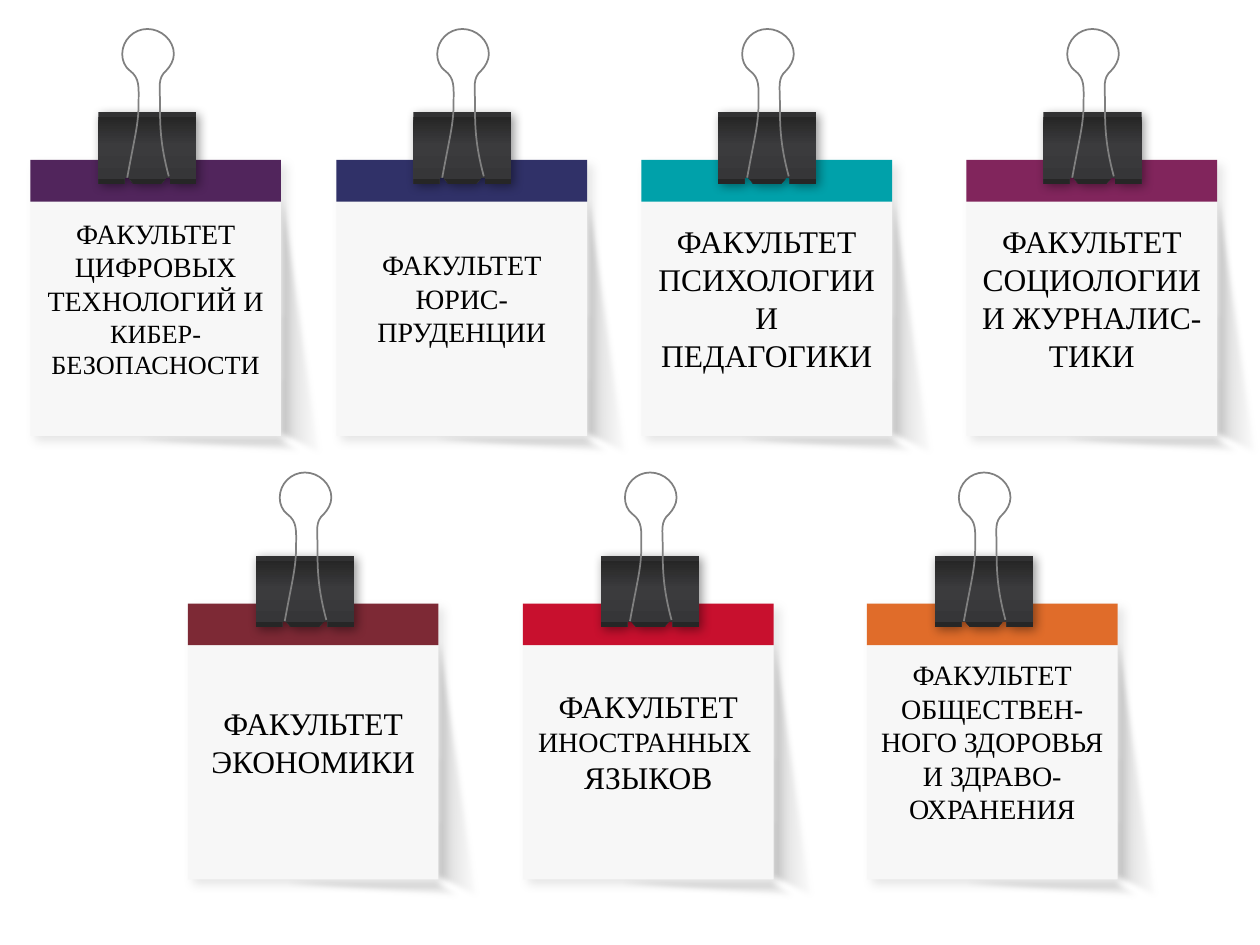
"""Build a slide of seven faculty cards, each held by a binder clip."""
from dataclasses import dataclass

import lxml.etree
import pptx
import pptx.dml.color
import pptx.enum.lang
import pptx.enum.shapes
import pptx.enum.text
import pptx.oxml
import pptx.oxml.ns
import pptx.util
from pptx.util import Inches

CARD_WIDTH, CARD_HEIGHT, BAND_HEIGHT = 1.99, 2.19, 0.33
CARD_TOP, CLIP_TOP, WIRE_TOP, ROW_STEP = 1.27, 0.89, 0.23, 3.52
FONT = "Times New Roman"

SIDE_SHADE = [(1.96, 2.2), (2.34, 2.4), (1.97, -0.26)]
BOTTOM_SHADE = [(2.01, 2.18), (2.34, 2.37), (-0.4, 2.18)]
CLIP_OUTLINE = [(0, 0), (0.78, 0), (0.78, 0.57), (0.57, 0.57), (0.57, 0.52), (0.54, 0.52),
                (0.5, 0.57), (0.28, 0.57), (0.24, 0.52), (0.21, 0.52), (0.21, 0.57), (0, 0.57)]
WIRE_CURVE = [(0.23, 1.18),
              (0.29, 0.85), (0.32, 0.76), (0.32, 0.58),
              (0.32, 0.46), (0.33, 0.39), (0.25, 0.33),
              (0.21, 0.3), (0.19, 0.25), (0.19, 0.2),
              (0.19, 0.09), (0.28, 0), (0.39, 0),
              (0.5, 0), (0.6, 0.09), (0.6, 0.2),
              (0.6, 0.25), (0.57, 0.3), (0.54, 0.33),
              (0.47, 0.39), (0.49, 0.46), (0.49, 0.58),
              (0.49, 0.76), (0.49, 0.91), (0.56, 1.17)]

SHADE_STOPS = [(0, "808080", 44), (100, "F3F3F3", 12)]
CLIP_STOPS = [(7, "313132", 100), (7, "262626", 100), (46, "3B3B3D", 100),
              (93, "363638", 100), (93, "262626", 100)]


@dataclass
class Faculty:
    left: float
    row: int
    clip_left: float
    color: str
    paragraphs: list[list[tuple[str, int]]]


FACULTIES = [
    Faculty(0.24, 0, 0.78, "51255C", [[("ФАКУЛЬТЕТ ЦИФРОВЫХ ТЕХНОЛОГИЙ И ", 16),
                                       ("КИБЕР-БЕЗОПАСНОСТИ", 15)]]),
    Faculty(2.67, 0, 3.28, "303168", [[("ФАКУЛЬТЕТ ЮРИС-ПРУДЕНЦИИ", 16)]]),
    Faculty(5.09, 0, 5.7, "00A1AA", [[("ФАКУЛЬТЕТ ПСИХОЛОГИИ И ПЕДАГОГИКИ", 18)]]),
    Faculty(7.67, 0, 8.28, "81255C", [[("ФАКУЛЬТЕТ СОЦИОЛОГИИ И ЖУРНАЛИС-ТИКИ", 18)]]),
    Faculty(1.49, 1, 2.03, "7D2935", [[("ФАКУЛЬТЕТ ЭКОНОМИКИ", 18)]]),
    Faculty(4.15, 1, 4.77, "C8102E", [[("ФАКУЛЬТЕТ ", 18), ("ИНОСТРАННЫХ ", 16)],
                                      [("ЯЗЫКОВ", 18)]]),
    Faculty(6.88, 1, 7.42, "E06C2A",
            [[("ФАКУЛЬТЕТ ОБЩЕСТВЕН-НОГО ЗДОРОВЬЯ И ЗДРАВО-ОХРАНЕНИЯ", 16)]]),
]


def rgb(color: str) -> pptx.dml.color.RGBColor:
    return pptx.dml.color.RGBColor.from_string(color)


def drawing_xml(markup: str) -> lxml.etree._Element:
    tag, rest = markup[1:].split(" ", 1)
    return pptx.oxml.parse_xml(f"<{tag} {pptx.oxml.ns.nsdecls('a')} {rest}")


def add_effect(shape, markup: str) -> None:
    shape.shadow.inherit = False
    effects = shape.element.spPr.find(pptx.oxml.ns.qn("a:effectLst"))
    effects.append(drawing_xml(markup))


def add_shadow(shape, opacity: int, blur: float, distance: float) -> None:
    add_effect(shape, f'<a:outerShdw blurRad="{pptx.util.Pt(blur)}" dist="{pptx.util.Pt(distance)}" '
                      f'dir="2700000" algn="tl" rotWithShape="0"><a:srgbClr val="000000">'
                      f'<a:alpha val="{opacity * 1000}"/></a:srgbClr></a:outerShdw>')


def fill_gradient(shape, stops: list[tuple[int, str, int]], angle: int) -> None:
    shape.fill.background()
    marks = "".join(f'<a:gs pos="{position * 1000}"><a:srgbClr val="{color}">'
                    f'<a:alpha val="{opacity * 1000}"/></a:srgbClr></a:gs>'
                    for position, color, opacity in stops)
    properties = shape.element.spPr
    properties.replace(properties.find(pptx.oxml.ns.qn("a:noFill")), drawing_xml(
        f'<a:gradFill rotWithShape="1"><a:gsLst>{marks}</a:gsLst>'
        f'<a:lin ang="{angle * 60000}" scaled="0"/></a:gradFill>'))


def add_outline(group, points: list[tuple[float, float]], left: float, top: float,
                close: bool = True):
    placed = [(Inches(left + x), Inches(top + y)) for x, y in points]
    builder = group.shapes.build_freeform(*placed[0])
    builder.add_line_segments(placed[1:], close=close)
    outline = builder.convert_to_shape()
    outline.shadow.inherit = False
    outline.line.fill.background()
    return outline


def bend_segments(shape) -> None:
    """Turn every three line segments into one cubic curve."""
    segments = list(shape.element.iter(pptx.oxml.ns.qn("a:lnTo")))
    for start in range(0, len(segments), 3):
        curve = drawing_xml("<a:cubicBezTo />")
        segments[start].addprevious(curve)
        for segment in segments[start:start + 3]:
            curve.append(segment[0])
            segment.getparent().remove(segment)


def add_rectangle(group, left: float, top: float, height: float, color: str):
    rectangle = group.shapes.add_shape(
        pptx.enum.shapes.MSO_SHAPE.RECTANGLE,
        Inches(left), Inches(top), Inches(CARD_WIDTH), Inches(height))
    rectangle.fill.solid()
    rectangle.fill.fore_color.rgb = rgb(color)
    rectangle.line.fill.background()
    rectangle.shadow.inherit = False
    return rectangle


def add_text(paragraph, text: str, *, size: int, color: str = "000000", font: str = FONT) -> None:
    run = paragraph.add_run()
    run.text = text
    run.font.size = pptx.util.Pt(size)
    run.font.name = font
    run.font.color.rgb = rgb(color)
    run.font.language_id = pptx.enum.lang.MSO_LANGUAGE_ID.RUSSIAN


def draw_card(slide, faculty: Faculty) -> None:
    group = slide.shapes.add_group_shape()
    top = CARD_TOP + faculty.row * ROW_STEP
    for points, angle in ((SIDE_SHADE, 0), (BOTTOM_SHADE, 90)):
        shade = add_outline(group, points, faculty.left, top)
        fill_gradient(shade, SHADE_STOPS, angle)
        add_effect(shade, f'<a:softEdge rad="{pptx.util.Pt(3)}"/>')
    card = add_rectangle(group, faculty.left, top, CARD_HEIGHT, "F7F7F7")
    add_shadow(card, opacity=10, blur=6, distance=4)
    frame = card.text_frame
    frame.word_wrap = True
    frame.vertical_anchor = pptx.enum.text.MSO_ANCHOR.MIDDLE
    for index, runs in enumerate(faculty.paragraphs):
        paragraph = frame.add_paragraph() if index else frame.paragraphs[0]
        paragraph.alignment = pptx.enum.text.PP_ALIGN.CENTER
        for text, size in runs:
            add_text(paragraph, text, size=size)
    add_rectangle(group, faculty.left, top, BAND_HEIGHT, faculty.color)


def draw_clip(slide, faculty: Faculty) -> None:
    group = slide.shapes.add_group_shape()
    drop = faculty.row * ROW_STEP
    clip = add_outline(group, CLIP_OUTLINE, faculty.clip_left, CLIP_TOP + drop)
    fill_gradient(clip, CLIP_STOPS, 90)
    add_shadow(clip, opacity=40, blur=6, distance=2)
    wire = add_outline(group, WIRE_CURVE, faculty.clip_left, WIRE_TOP + drop, close=False)
    bend_segments(wire)
    wire.fill.background()
    wire.line.color.rgb = rgb("808080")
    wire.line.width = pptx.util.Pt(1)


def main() -> None:
    presentation = pptx.Presentation()
    presentation.slide_width, presentation.slide_height = Inches(10), Inches(7.5)
    slide = presentation.slides.add_slide(presentation.slide_layouts[6])
    for faculty in FACULTIES:
        draw_card(slide, faculty)
        draw_clip(slide, faculty)
    presentation.save("out.pptx")


if __name__ == "__main__":
    main()
